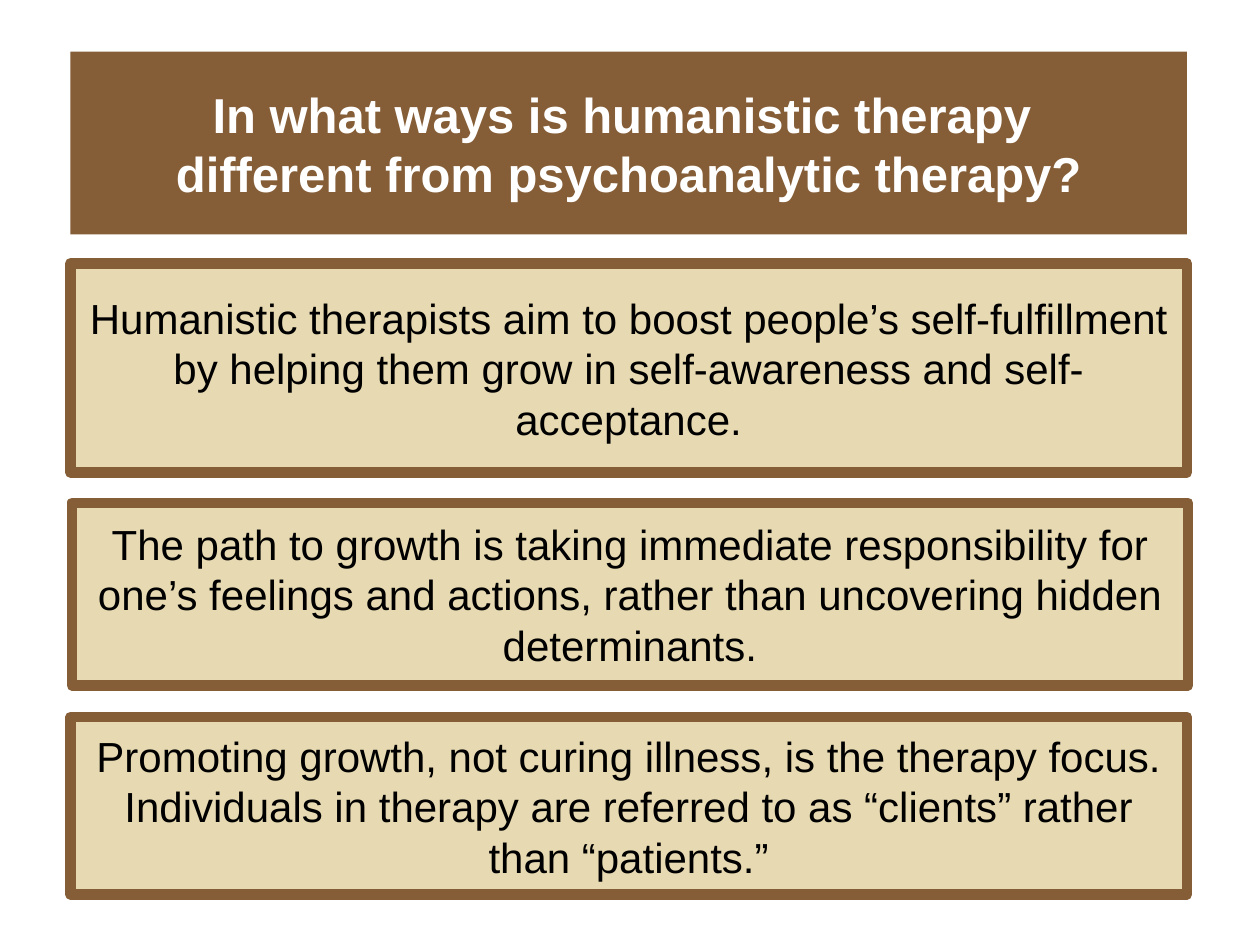
from dataclasses import dataclass
from typing import Any

from lxml.etree import SubElement
from pptx import Presentation
from pptx.dml.color import RGBColor
from pptx.enum.shapes import MSO_SHAPE as Shape
from pptx.enum.text import MSO_ANCHOR as Anchor, PP_ALIGN as Align
from pptx.oxml.ns import qn
from pptx.util import Inches, Pt

BROWN = "855D36"
SAND = "E7D9B1"
WHITE = "FFFFFF"
BLACK = "000000"


def colour(value):
    return RGBColor.from_string(value)


@dataclass
class SlideBuilder:
    slide: Any
    font: str = "Arial"
    width: float = 8.86

    def panel(self, text, left, top, height, fill, text_colour, size, bold=False):
        """Add a filled rectangle with centred text."""
        panel = self.slide.shapes.add_shape(
            Shape.RECTANGLE, Inches(left), Inches(top), Inches(self.width), Inches(height))
        panel.shadow.inherit = False
        panel.fill.solid()
        panel.fill.fore_color.rgb = colour(fill)
        panel.line.fill.background()

        frame = panel.text_frame
        frame.word_wrap = True
        frame.vertical_anchor = Anchor.MIDDLE
        frame.text = text
        for paragraph in frame.paragraphs:
            paragraph.alignment = Align.CENTER
            for run in paragraph.runs:
                run.font.name = self.font
                run.font.size = Pt(size)
                run.font.bold = bold
                run.font.color.rgb = colour(text_colour)
        return panel

    def heading(self, text, left, top, height):
        self.panel(text, left, top, height, BROWN, WHITE, 28, bold=True)

    def statement(self, text, left, top, height):
        """Add a sand panel with a thick, round-cornered border."""
        border = self.panel(text, left, top, height, SAND, BLACK, 24).line
        border.color.rgb = colour(BROWN)
        border.width = Pt(6)
        SubElement(border._get_or_add_ln(), qn("a:round"))


def main():
    presentation = Presentation()
    presentation.slide_width = Inches(10)
    presentation.slide_height = Inches(7.5)
    builder = SlideBuilder(presentation.slides.add_slide(presentation.slide_layouts[6]))

    # Question
    builder.heading(
        "In what ways is humanistic therapy \vdifferent from psychoanalytic therapy?",
        0.56, 0.41, 1.45)

    # Answers: left, top, height, text
    answers = [
        (0.56, 2.09, 1.66, "Humanistic therapists aim to boost people’s self-fulfillment by "
                           "helping them grow in self-awareness and self-acceptance."),
        (0.57, 3.99, 1.45, "The path to growth is taking immediate responsibility for one’s "
                           "feelings and actions, rather than uncovering hidden determinants."),
        (0.56, 5.69, 1.41, "Promoting growth, not curing illness, is the therapy focus. "
                           "Individuals in therapy are referred to as “clients” rather than "
                           "“patients.”"),
    ]
    for left, top, height, answer in answers:
        builder.statement(answer, left, top, height)

    presentation.save("out.pptx")


if __name__ == "__main__":
    main()
